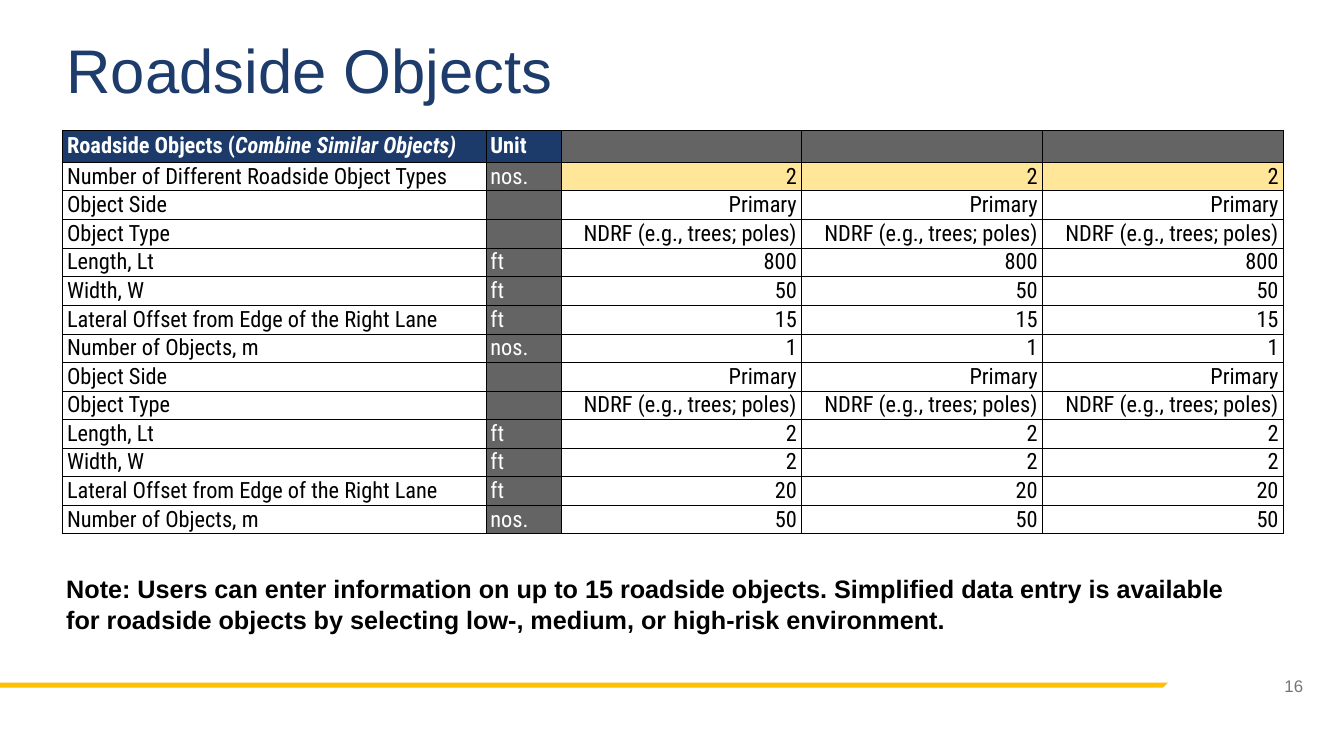
from lxml.etree import SubElement as Sub
from pptx import Presentation
from pptx.dml.color import RGBColor as Rgb
from pptx.enum.text import MSO_ANCHOR as Anchor, PP_ALIGN as Align
from pptx.oxml.ns import qn
from pptx.util import Cm, Pt

HUES = {
    "title": "1D3B6B", "head": "1C3B6B", "gray": "646464", "input": "FFE699",
    "white": "FFFFFF", "black": "000000", "gold": "FFC000", "page": "757575",
}


def hue(name):
    return Rgb.from_string(HUES[name])


class Deck:
    font = "Arial"
    grid = "Roboto Condensed"

    def __init__(self):
        self.prs = Presentation()
        self.prs.slide_width, self.prs.slide_height = Cm(33.87), Cm(19.05)
        self.slide = self.prs.slides.add_slide(self.prs.slide_layouts[5])
        self.shapes = self.slide.shapes

    def run(self, para, text, size, color, bold=False, italic=False, font=None):
        run = para.add_run()
        run.text = text
        run.font.name = font or self.font
        run.font.size = Pt(size)
        run.font.bold, run.font.italic = bold, italic
        run.font.color.rgb = hue(color)

    def place(self, shape, box):
        shape.left, shape.top, shape.width, shape.height = map(Cm, box)

    def title(self, text, box):
        shape = self.shapes.title
        self.place(shape, box)
        shape.text_frame.vertical_anchor = Anchor.MIDDLE
        para = shape.text_frame.paragraphs[0]
        para.alignment, para.line_spacing = Align.LEFT, 0.9
        self.run(para, text, 44, "title")

    def text(self, text, box, size, color, bold=False, align=Align.LEFT, anchor=Anchor.TOP):
        frame = self.shapes.add_textbox(*map(Cm, box)).text_frame
        frame.word_wrap = True
        frame.vertical_anchor = anchor
        para = frame.paragraphs[0]
        para.alignment = align
        self.run(para, text, size, color, bold)

    def bar(self, points, color):
        first, *rest = [(Cm(x), Cm(y)) for x, y in points]
        form = self.shapes.build_freeform(*first)
        form.add_line_segments(rest, close=True)
        shape = form.convert_to_shape()
        shape.shadow.inherit = False
        shape.fill.solid()
        shape.fill.fore_color.rgb = hue(color)
        shape.line.fill.background()

    def table(self, box, widths, heights):
        frame = self.shapes.add_table(len(heights), len(widths), *map(Cm, box))
        table = frame.table
        table.first_row = table.horz_banding = False
        for col, width in zip(table.columns, widths):
            col.width = Cm(width)
        for row, height in zip(table.rows, heights):
            row.height = Cm(height)
        return table

    def cell(self, cell, runs, fill, color, bold=False, align=Align.LEFT, top=0.25, base=0.25):
        cell.margin_left = cell.margin_right = Cm(0.12)
        cell.margin_top = cell.margin_bottom = 0
        cell.vertical_anchor = Anchor.MIDDLE
        props = cell._tc.get_or_add_tcPr()
        for side, width in zip("LRTB", (0.25, 0.25, top, base)):
            line = Sub(props, qn(f"a:ln{side}"), w=str(Pt(width)))
            Sub(Sub(line, qn("a:solidFill")), qn("a:srgbClr"), val=HUES["black"])
        if fill:
            cell.fill.solid()
            cell.fill.fore_color.rgb = hue(fill)
        else:
            cell.fill.background()
        para = cell.text_frame.paragraphs[0]
        para.alignment = align
        for text, italic in runs:
            self.run(para, text, 16, color, bold, italic, self.grid)
        if not runs:
            Sub(para._p, qn("a:endParaRPr"), sz="1600")


def group(*values):
    labels = [
        ("Object Side", ""), ("Object Type", ""), ("Length, Lt", "ft"), ("Width, W", "ft"),
        ("Lateral Offset from Edge of the Right Lane", "ft"), ("Number of Objects, m", "nos."),
    ]
    return [(*label, value) for label, value in zip(labels, values)] and [
        (name, unit, value) for (name, unit), value in zip(labels, values)
    ]


def main():
    deck = Deck()
    deck.bar([(-0.03, 17.33), (0, 17.2), (29.44, 17.2), (29.31, 17.33)], "gold")
    deck.title("Roadside Objects", (1.42, 0.43, 29.21, 2.84))
    deck.text("16", (30.96, 16.94, 2.13, 0.66), 12, "page",
              align=Align.RIGHT, anchor=Anchor.MIDDLE)
    deck.text(
        "Note: Users can enter information on up to 15 roadside objects. Simplified data entry "
        "is available for roadside objects by selecting low-, medium, or high-risk environment.",
        (1.42, 14.33, 30.3, 1.7), 18, "black", bold=True)

    kind = "NDRF (e.g., trees; poles)"
    rows = [
        ("Number of Different Roadside Object Types", "nos.", "2"),
        *group("Primary", kind, "800", "50", "15", "1"),
        *group("Primary", kind, "2", "2", "20", "50"),
    ]
    widths = [10.67, 1.89] + [6.07] * 3
    heights = [0.81] + [0.72] * len(rows)
    table = deck.table((1.57, 3.28, sum(widths), sum(heights)), widths, heights)

    heads = [[("Roadside Objects (", False), ("Combine Similar Objects)", True)],
             [("Unit", False)], [], [], []]
    for col, runs in enumerate(heads):
        deck.cell(table.cell(0, col), runs, "head" if runs else "gray", "white", bold=True)

    for row, (name, unit, value) in enumerate(rows, 1):
        edge = {"top": 1 if row in (2, 8) else 0.25, "base": 1 if row in (1, 7, 13) else 0.25}
        deck.cell(table.cell(row, 0), [(name, False)], None, "black", **edge)
        deck.cell(table.cell(row, 1), [(unit, False)] if unit else [], "gray", "white", **edge)
        for col in range(2, len(widths)):
            deck.cell(table.cell(row, col), [(value, False)], "input" if row == 1 else "white",
                      "black", align=Align.RIGHT, **edge)

    deck.prs.save("out.pptx")


if __name__ == "__main__":
    main()
